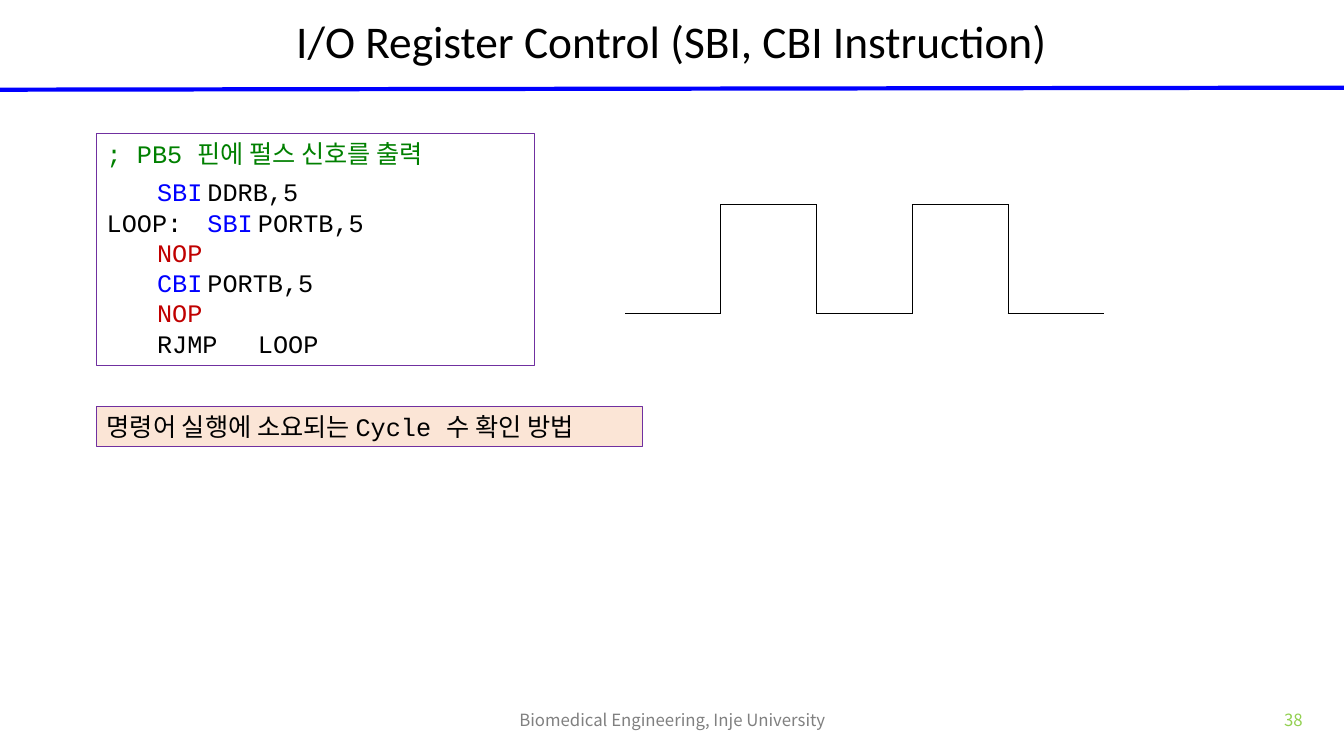
from lxml.etree import SubElement
from pptx import Presentation
from pptx.dml.color import RGBColor
from pptx.enum.shapes import MSO_CONNECTOR, MSO_SHAPE
from pptx.enum.text import MSO_ANCHOR, PP_ALIGN
from pptx.oxml.ns import qn
from pptx.util import Inches, Pt

SANS, MONO = "Noto Sans CJK KR", "Courier New"
BLACK, BLUE, RED, GREEN, PURPLE = "000000", "0000FF", "C00000", "008000", "7030A0"


def rgb(value):
    return RGBColor.from_string(value)


def write(tf, paragraphs, size=18, font=MONO, align=PP_ALIGN.LEFT, anchor=MSO_ANCHOR.TOP):
    """Fill a text frame; each paragraph is a list of (text, colour[, font]) runs."""
    tf.word_wrap = True
    tf.vertical_anchor = anchor
    for i, runs in enumerate(paragraphs):
        p = tf.add_paragraph() if i else tf.paragraphs[0]
        p.alignment = align
        for text, color, *own_font in runs:
            r = p.add_run()
            r.text = text
            r.font.size = Pt(size)
            r.font.name = own_font[0] if own_font else font
            r.font.color.rgb = rgb(color)
            SubElement(r.font._element, qn("a:ea"), typeface=SANS)


def add_title(s, text, x, y, w, h):
    sp = s.shapes.title
    sp.left, sp.top, sp.width, sp.height = map(Inches, (x, y, w, h))
    write(sp.text_frame, [[(text, BLACK)]], size=32.4, font="Calibri",
          align=PP_ALIGN.CENTER, anchor=MSO_ANCHOR.MIDDLE)
    sp.text_frame.paragraphs[0].line_spacing = 0.9


def add_title_rule(s, x1, y1, x2, y2):
    line = s.shapes.add_connector(MSO_CONNECTOR.STRAIGHT, *map(Inches, (x1, y1, x2, y2)))
    line.line.color.rgb = rgb(BLUE)
    line.line.width = Pt(3)
    SubElement(line._element.spPr, qn("a:effectLst"))


def add_footer(s, text, color, align, x, y, w, h):
    sp = s.shapes.add_textbox(*map(Inches, (x, y, w, h)))
    write(sp.text_frame, [[(text, color)]], size=12, font=SANS,
          align=align, anchor=MSO_ANCHOR.MIDDLE)


def add_text_frame(s, paragraphs, x, y, w, h, fill=None):
    sp = s.shapes.add_shape(MSO_SHAPE.RECTANGLE, *map(Inches, (x, y, w, h)))
    sp.shadow.inherit = False
    if fill:
        sp.fill.solid()
        sp.fill.fore_color.rgb = rgb(fill)
    else:
        sp.fill.background()
    sp.line.color.rgb = rgb(PURPLE)
    sp.line.width = Pt(0.75)
    write(sp.text_frame, paragraphs)
    return sp


def set_borders(cell, sides):
    """Draw the named sides (of L, R, T, B) in black and hide the others."""
    tcPr = cell._tc.get_or_add_tcPr()
    for side in "LRTB":
        ln = SubElement(tcPr, qn(f"a:ln{side}"), w=str(Pt(1)))
        if side in sides:
            SubElement(SubElement(ln, qn("a:solidFill")), qn("a:srgbClr"), val=BLACK)
        else:
            SubElement(ln, qn("a:noFill"))


def add_pulse_wave(s, x, y, w, h, steps=5):
    """Square wave made of cell borders: low on even steps, high on odd ones."""
    table = s.shapes.add_table(1, steps, *map(Inches, (x, y, w, h))).table
    table.first_row = table.horz_banding = False
    for i, cell in enumerate(table.rows[0].cells):
        sides = "T" if i % 2 else "B"
        if i > 0:
            sides += "L"
        if i < steps - 1:
            sides += "R"
        set_borders(cell, sides)
        cell.fill.background()


def main():
    prs = Presentation()
    prs.slide_width, prs.slide_height = Inches(13.33), Inches(7.5)
    s = prs.slides.add_slide(prs.slide_layouts[5])

    add_title_rule(s, 0, 0.89, 13.33, 0.87)
    add_title(s, "I/O Register Control (SBI, CBI Instruction)", 0.31, 0.16, 12.7, 0.55)
    add_footer(s, "Biomedical Engineering, Inje University", "808080",
               PP_ALIGN.CENTER, 4.42, 6.95, 4.5, 0.39)
    add_footer(s, "38", "92D050", PP_ALIGN.RIGHT, 9.42, 6.95, 3.6, 0.39)

    code = [
        [("; PB5 핀에 펄스 신호를 출력", GREEN)],
        [("\tSBI\t", BLUE), ("DDRB,5", BLACK)],
        [("LOOP:\t", BLACK), ("SBI\t", BLUE), ("PORTB,5", BLACK)],
        [("\tNOP", RED)],
        [("\tCBI\t", BLUE), ("PORTB,5", BLACK)],
        [("\tNOP", RED)],
        [("\tRJMP\tLOOP", BLACK)],
    ]
    listing = add_text_frame(s, code, 0.96, 1.32, 4.34, 2.31)
    listing.text_frame.paragraphs[0].space_after = Pt(6)

    cycle_note = [("명령어 실행에 소요되는 Cycle 수 ", BLACK), ("확인 방법", BLACK, SANS)]
    add_text_frame(s, [cycle_note], 0.96, 4.03, 5.41, 0.4, fill="FBE5D6")
    add_pulse_wave(s, 6.2, 2.03, 4.75, 1.08)

    prs.save("out.pptx")


if __name__ == "__main__":
    main()
